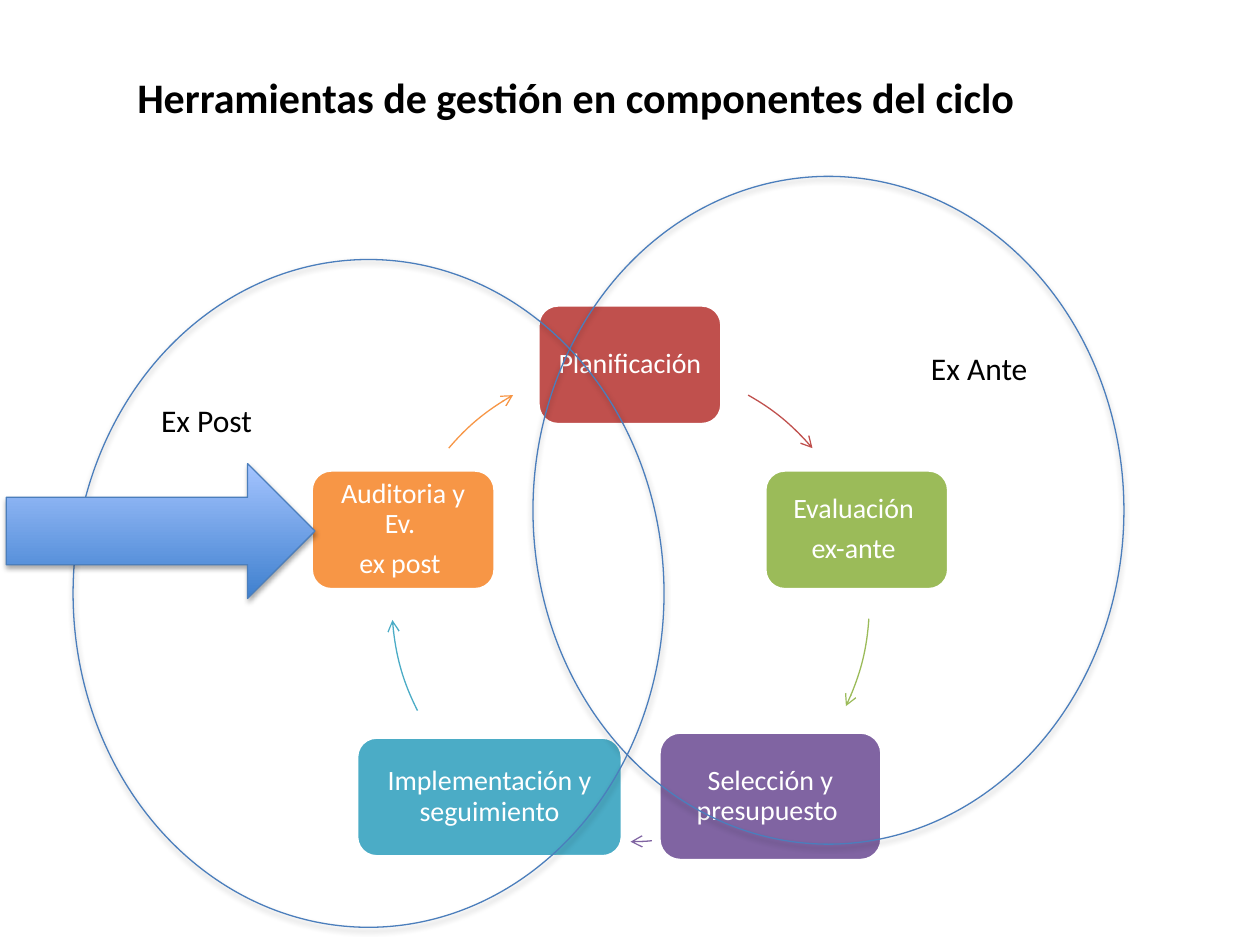
"""Build the slide on management tools across the project cycle."""
import math

import pptx
import pptx.dml.color
import pptx.enum.shapes
import pptx.enum.text
import pptx.oxml
import pptx.oxml.ns
import pptx.util

Inches, Pt = pptx.util.Inches, pptx.util.Pt
MSO_SHAPE = pptx.enum.shapes.MSO_SHAPE
PP_ALIGN = pptx.enum.text.PP_ALIGN
MSO_ANCHOR = pptx.enum.text.MSO_ANCHOR
RGB = pptx.dml.color.RGBColor.from_string
NS = pptx.oxml.ns.nsdecls("a")
COLORS = {
    "red": "C0504D", "green": "9BBB59", "purple": "8064A2",
    "teal": "4BACC6", "orange": "F79646", "outline": "4B7EBC",
    "grad_low": "3F80CE", "grad_high": "A4C4FF",
    "white": "FFFFFF", "black": "000000",
}


def write(sp, lines, size, color, align, bold=False):
    tf = sp.text_frame
    tf.word_wrap = True
    tf.text = "\n".join(lines)
    for p in tf.paragraphs:
        p.alignment = align
        for r in p.runs:
            r.font.size = Pt(size)
            r.font.name = "Calibri"
            r.font.bold = bold
            r.font.color.rgb = RGB(COLORS[color])
    return tf


def outline_with_shadow(sp):
    sp.line.color.rgb = RGB(COLORS["outline"])
    sp.line.width = Pt(0.75)
    sp.shadow.inherit = False
    effects = sp._element.spPr.find(pptx.oxml.ns.qn("a:effectLst"))
    effects.append(pptx.oxml.parse_xml(
        f'<a:outerShdw {NS} blurRad="{Pt(3.1)}" '
        f'dist="{Pt(1.8)}" dir="5400000" rotWithShape="0">'
        f'<a:srgbClr val="{COLORS["black"]}"><a:alpha val="35000"/>'
        '</a:srgbClr></a:outerShdw>'))


prs = pptx.Presentation()
prs.slide_width, prs.slide_height = Inches(10), Inches(7.5)
s = prs.slides.add_slide(prs.slide_layouts[6])

ring_left, ring_top, ring_size = Inches(3.11), Inches(2.89), Inches(3.79)
radius = ring_size / 2
stages = [
    (["Planificación"], "red", 4.27, 2.42, 1.46, 0.95, 29.5, 49.6),
    (["Evaluación ", "ex-ante "], "green", 6.07, 3.73, 1.46, 0.95, 93.8, 115.6),
    (["Selección y presupuesto "], "purple", 5.23, 5.81, 1.77, 1.02, 174.9, 180),
    (["Implementación y seguimiento"], "teal", 2.83, 5.85, 2.11, 0.95, 243.2, 265.9),
    (["Auditoria y Ev. ", "ex post "], "orange", 2.47, 3.73, 1.46, 0.95, 310.4, 330.5),
]
for lines, color, x, y, w, h, start, end in stages:
    sp = s.shapes.add_shape(MSO_SHAPE.ROUNDED_RECTANGLE,
                            Inches(x), Inches(y), Inches(w), Inches(h))
    sp.shadow.inherit = False
    sp.fill.solid()
    sp.fill.fore_color.rgb = RGB(COLORS[color])
    sp.line.color.rgb = RGB(COLORS["white"])
    sp.line.width = Pt(2)
    tf = write(sp, lines, 16, "white", PP_ALIGN.CENTER)
    tf.vertical_anchor = MSO_ANCHOR.MIDDLE
    tf.margin_left = tf.margin_right = Inches(0.07)
    tf.margin_top = tf.margin_bottom = Inches(0.07)
    for p in tf.paragraphs:
        p.line_spacing = 0.9
        p.space_after = Pt(5.6)

    builder = s.shapes.build_freeform(ring_left, ring_top)
    builder.add_line_segments([(ring_left + ring_size, ring_top + ring_size)], close=False)
    arc = builder.convert_to_shape()
    a, b = math.radians(start), math.radians(end)
    k = 4 / 3 * math.tan((b - a) / 4)
    curve = [
        (math.sin(a), -math.cos(a)),
        (math.sin(a) + k * math.cos(a), -math.cos(a) + k * math.sin(a)),
        (math.sin(b) - k * math.cos(b), -math.cos(b) - k * math.sin(b)),
        (math.sin(b), -math.cos(b)),
    ]
    pts = [f'<a:pt x="{round(radius * (1 + u))}" y="{round(radius * (1 + v))}"/>'
           for u, v in curve]
    outline = next(arc._element.iter(pptx.oxml.ns.qn("a:path")))
    outline.getparent().replace(outline, pptx.oxml.parse_xml(
        f'<a:path {NS} w="{ring_size}" h="{ring_size}"><a:moveTo>{pts[0]}</a:moveTo>'
        f'<a:cubicBezTo>{"".join(pts[1:])}</a:cubicBezTo></a:path>'))
    arc.shadow.inherit = False
    arc.fill.background()
    arc.line.color.rgb = RGB(COLORS[color])
    arc.line.width = Pt(0.75)
    arc.line._get_or_add_ln().append(pptx.oxml.parse_xml(
        f'<a:tailEnd {NS} type="arrow"/>'))

phases = [("Ex Ante", 4.23, 1.4, 7.29, 2.72), ("Ex Post", 0.58, 2.06, 1.18, 3.13)]
for label, x, y, label_x, label_y in phases:
    sp = s.shapes.add_shape(MSO_SHAPE.OVAL, Inches(x), Inches(y),
                            Inches(4.69), Inches(5.3))
    sp.fill.background()
    outline_with_shadow(sp)
    sp = s.shapes.add_textbox(Inches(label_x), Inches(label_y), Inches(1.28), Inches(0.4))
    tf = write(sp, [label], 18, "black", PP_ALIGN.LEFT)
    tf.auto_size = pptx.enum.text.MSO_AUTO_SIZE.SHAPE_TO_FIT_TEXT

title = s.shapes.add_textbox(Inches(0.07), Inches(0.14), Inches(9), Inches(1.25))
tf = write(title, ["Herramientas de gestión en componentes del ciclo"], 24,
           "black", PP_ALIGN.CENTER, bold=True)
tf.vertical_anchor = MSO_ANCHOR.MIDDLE

arrow = s.shapes.add_shape(MSO_SHAPE.RIGHT_ARROW, Inches(0.05), Inches(3.68),
                           Inches(2.45), Inches(1.07))
arrow.fill.gradient()
arrow.fill.gradient_angle = 90
for stop, position, color in zip(arrow.fill.gradient_stops, (0, 1),
                                 ("grad_low", "grad_high")):
    stop.position = position
    stop.color.rgb = RGB(COLORS[color])
outline_with_shadow(arrow)

prs.save("out.pptx")
